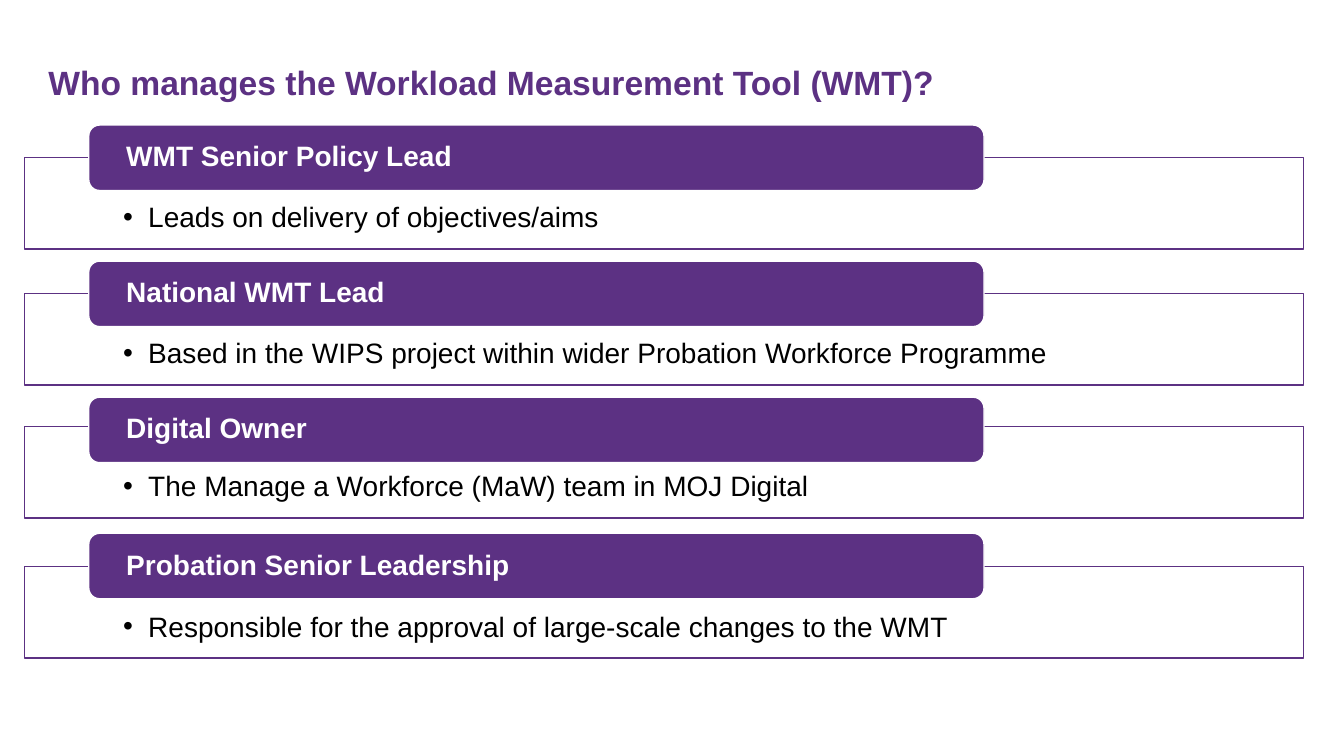
from dataclasses import dataclass

from lxml import etree
from pptx import Presentation
from pptx import util as u
from pptx.dml.color import RGBColor
from pptx.enum import shapes, text
from pptx.oxml import ns

SCALE = 9144


@dataclass(frozen=True)
class Theme:
    purple: RGBColor = RGBColor(0x5C, 0x31, 0x83)
    white: RGBColor = RGBColor(0xFF, 0xFF, 0xFF)
    black: RGBColor = RGBColor(0x00, 0x00, 0x00)
    font: str = "Arial"
    title_size: int = 24
    body_size: int = 20


THEME = Theme()

TITLE = "Who manages the Workload Measurement Tool (WMT)?"
BAR_TOP, BAR_PITCH = 124, 135
ROLES = [
    ("WMT Senior Policy Lead", "Leads on delivery of objectives/aims", 32),
    ("National WMT Lead",
     "Based in the WIPS project within wider Probation Workforce Programme", 32),
    ("Digital Owner", "The Manage a Workforce (MaW) team in MOJ Digital", 29),
    ("Probation Senior Leadership",
     "Responsible for the approval of large-scale changes to the WMT", 33),
]


def px(length):
    return u.Emu(length * SCALE)


def add_child(parent, tag, **attributes):
    return etree.SubElement(parent, ns.qn(tag), attributes)


def write(shape, words, size, color, bold, anchor, insets, bullet=False):
    frame = shape.text_frame
    frame.word_wrap = True
    frame.vertical_anchor = anchor
    (frame.margin_left, frame.margin_top,
     frame.margin_right, frame.margin_bottom) = map(px, insets)
    frame.text = words
    para = frame.paragraphs[0]
    para.alignment = text.PP_ALIGN.LEFT
    para.line_spacing = 0.9
    if bullet:
        properties = para._p.get_or_add_pPr()
        properties.set("marL", str(px(25)))
        properties.set("indent", str(px(-25)))
        add_child(properties, "a:buFont", typeface=THEME.font)
        add_child(properties, "a:buChar", char="•")
    span = para.runs[0]
    span.font.name = THEME.font
    span.font.size = u.Pt(size)
    span.font.bold = bold
    span.font.color.rgb = color


def add_box(page, kind, bounds, fill, line):
    box = page.shapes.add_shape(kind, *map(px, bounds))
    box.shadow.inherit = False
    box.fill.solid()
    box.fill.fore_color.rgb = fill
    box.line.color.rgb = line
    box.line.width = u.Pt(1)
    return box


def add_title(page):
    box = page.shapes.add_textbox(*map(px, (48, 27, 1237, 113)))
    write(box, TITLE, THEME.title_size, THEME.purple, True,
          text.MSO_ANCHOR.MIDDLE, (0, 0, 0, 0))


def add_detail(page, top, words):
    box = add_box(page, shapes.MSO_SHAPE.RECTANGLE, (24, top, 1269, 91),
                  THEME.white, THEME.purple)
    tint = box._element.spPr.find(ns.qn("a:solidFill"))[0]
    add_child(tint, "a:alpha", val="90000")
    write(box, words, THEME.body_size, THEME.black, False,
          text.MSO_ANCHOR.TOP, (98, 46, 98, 16), bullet=True)


def add_role_bar(page, top, words):
    box = add_box(page, shapes.MSO_SHAPE.ROUNDED_RECTANGLE, (88, top, 888, 65),
                  THEME.purple, THEME.white)
    write(box, words, THEME.body_size, THEME.white, True,
          text.MSO_ANCHOR.MIDDLE, (34, 0, 34, 0))


def main():
    deck = Presentation()
    deck.slide_width, deck.slide_height = px(1333), px(750)
    page = deck.slides.add_slide(deck.slide_layouts[6])
    add_title(page)
    for index, (role, duty, drop) in enumerate(ROLES):
        top = BAR_TOP + index * BAR_PITCH
        add_detail(page, top + drop, duty)
        add_role_bar(page, top, role)
    deck.save("out.pptx")


if __name__ == "__main__":
    main()
